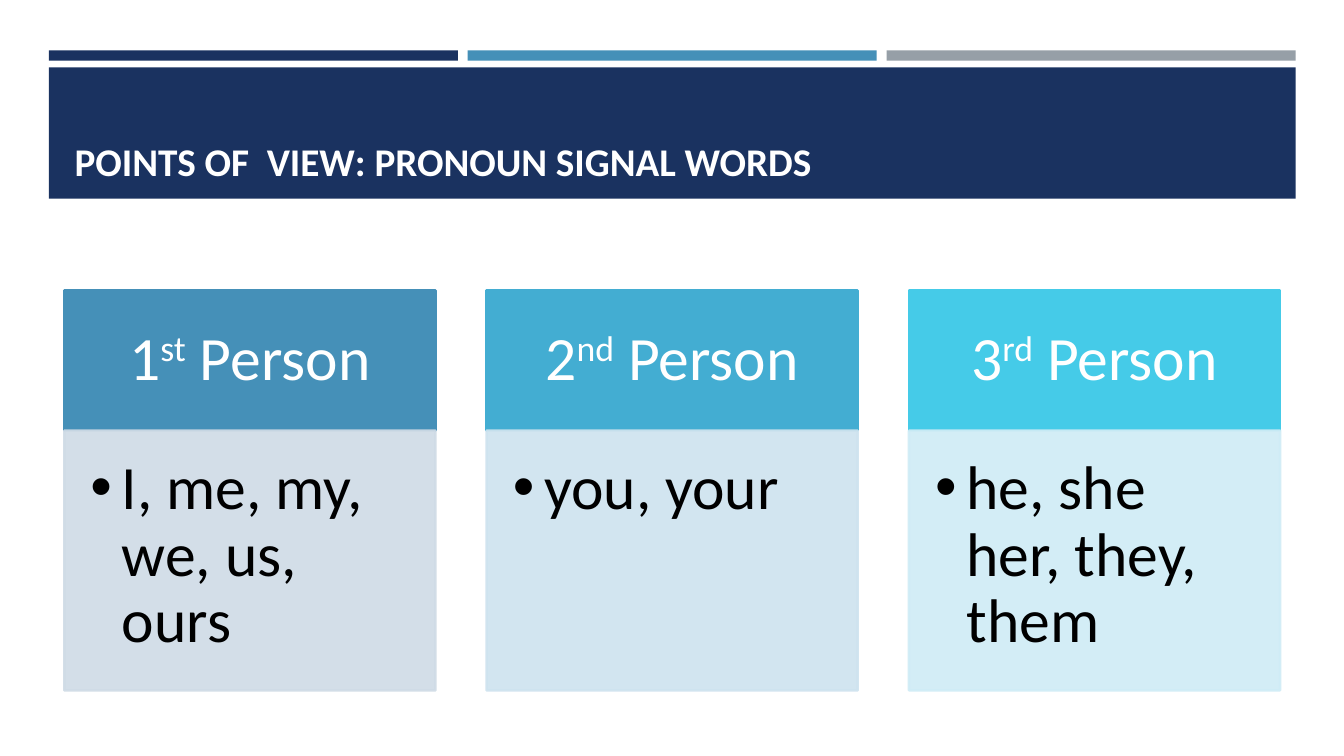
from lxml.etree import SubElement
from pptx import Presentation
from pptx.dml.color import RGBColor
from pptx.enum.shapes import MSO_SHAPE as SHAPE
from pptx.enum.text import MSO_ANCHOR as ANCHOR, PP_ALIGN as ALIGN
from pptx.oxml.ns import qn
from pptx.util import Cm, Pt

NAVY = RGBColor(0x1A, 0x32, 0x60)
BLUE = RGBColor(0x45, 0x90, 0xB8)
GREY = RGBColor(0x96, 0x9F, 0xA7)
SKY = RGBColor(0x43, 0xAD, 0xD2)
CYAN = RGBColor(0x45, 0xCB, 0xE8)
PALE_BLUE = RGBColor(0xCF, 0xDB, 0xE6)
PALE_SKY = RGBColor(0xCE, 0xE3, 0xEF)
PALE_CYAN = RGBColor(0xCF, 0xEC, 0xF6)
WHITE = RGBColor(0xFF, 0xFF, 0xFF)
BLACK = RGBColor(0, 0, 0)

TITLE = "POINTS OF  VIEW: PRONOUN SIGNAL WORDS"
PERSONS = [
    ("1", "st", "I, me, my, we, us, ours", BLUE, PALE_BLUE),
    ("2", "nd", "you, your", SKY, PALE_SKY),
    ("3", "rd", "he, she her, they, them", CYAN, PALE_CYAN),
]


def set_all(target, values):
    """Set each attribute named in a dict of values."""
    for name, value in values.items():
        setattr(target, name, value)


def set_frame(tf, anchor, margins):
    """Set anchor, wrapping and the left, top, right and bottom margins in cm."""
    sides = ("margin_left", "margin_top", "margin_right", "margin_bottom")
    set_all(tf, {"word_wrap": True, "vertical_anchor": anchor})
    set_all(tf, dict(zip(sides, map(Cm, margins))))


def add_run(p, text, size, color, bold=False):
    """Add a formatted run to a paragraph."""
    r = p.add_run()
    r.text = text
    set_all(r.font, {"name": "Calibri", "size": Pt(size), "bold": bold})
    r.font.color.rgb = color
    return r


def add_box(s, x, y, w, h, color, outlined=False):
    """Add a flat rectangle, with an outline of its own colour if asked."""
    sp = s.shapes.add_shape(SHAPE.RECTANGLE, Cm(x), Cm(y), Cm(w), Cm(h))
    sp.shadow.inherit = False
    sp.fill.solid()
    sp.fill.fore_color.rgb = color
    if outlined:
        sp.line.color.rgb = color
        sp.line.width = Pt(1.75)
    else:
        sp.line.fill.background()
    return sp


def add_banner(s, x, y, w, h):
    """Draw three accent bars above a band that holds the title."""
    gap, bar_h, band_top = 0.25, 0.26, 0.43
    bar_w = (w - 2 * gap) / 3
    for i, color in enumerate((NAVY, BLUE, GREY)):
        add_box(s, x + i * (bar_w + gap), y, bar_w, bar_h, color)
    add_box(s, x, y + band_top, w, h - band_top, NAVY)

    title = s.shapes.title
    set_all(title, {"left": Cm(x + 0.4), "top": Cm(y + 0.69),
                    "width": Cm(w - 0.8), "height": Cm(2.82)})
    set_frame(title.text_frame, ANCHOR.BOTTOM, (0.25, 0.13, 0.25, 0.13))
    p = title.text_frame.paragraphs[0]
    p.alignment = ALIGN.LEFT
    add_run(p, TITLE, 28, WHITE, bold=True)
    s.shapes.element.append(title.element)


def add_heading(s, x, y, w, h, number, suffix, color):
    """Draw a column heading with a raised ordinal suffix."""
    sp = add_box(s, x, y, w, h, color, outlined=True)
    set_frame(sp.text_frame, ANCHOR.MIDDLE, (0.86, 0.5, 0.86, 0.5))
    p = sp.text_frame.paragraphs[0]
    set_all(p, {"alignment": ALIGN.CENTER, "line_spacing": 0.9})
    for text in (number, suffix, " Person"):
        r = add_run(p, text, 44, WHITE)
        if text == suffix:
            r._r.get_or_add_rPr().set("baseline", "30000")


def add_words(s, x, y, w, h, words, color):
    """Draw a translucent panel with a bulleted list of pronouns."""
    sp = add_box(s, x, y, w, h, color, outlined=True)
    for clr in sp.element.spPr.iter(qn("a:srgbClr")):
        SubElement(clr, qn("a:alpha"), val="90000")
    set_frame(sp.text_frame, ANCHOR.TOP, (0.66, 0.66, 0.86, 1))
    p = sp.text_frame.paragraphs[0]
    set_all(p, {"alignment": ALIGN.LEFT, "line_spacing": 0.9})
    pPr = p._p.get_or_add_pPr()
    indent = Cm(0.79)
    pPr.set("marL", str(indent))
    pPr.set("indent", str(-indent))
    SubElement(pPr, qn("a:buFont"), typeface="Arial")
    SubElement(pPr, qn("a:buChar"), char="•")
    add_run(p, words, 44, BLACK)


def add_columns(s, x, y, w, h):
    """Place one heading and one word panel for each person."""
    gap, head_h = 1.29, 3.53
    col_w = (w - 2 * gap) / 3
    for i, (number, suffix, words, color, pale) in enumerate(PERSONS):
        left = x + i * (col_w + gap)
        add_heading(s, left, y, col_w, head_h, number, suffix, color)
        add_words(s, left, y + head_h, col_w, h - head_h, words, pale)


def main():
    """Build and save the slide."""
    prs = Presentation()
    set_all(prs, {"slide_width": Cm(33.87), "slide_height": Cm(19.05)})
    s = prs.slides.add_slide(prs.slide_layouts[5])
    add_banner(s, 1.23, 1.27, 31.42, 3.74)
    add_columns(s, 1.62, 7.32, 30.64, 10.08)
    prs.save("out.pptx")


if __name__ == "__main__":
    main()
